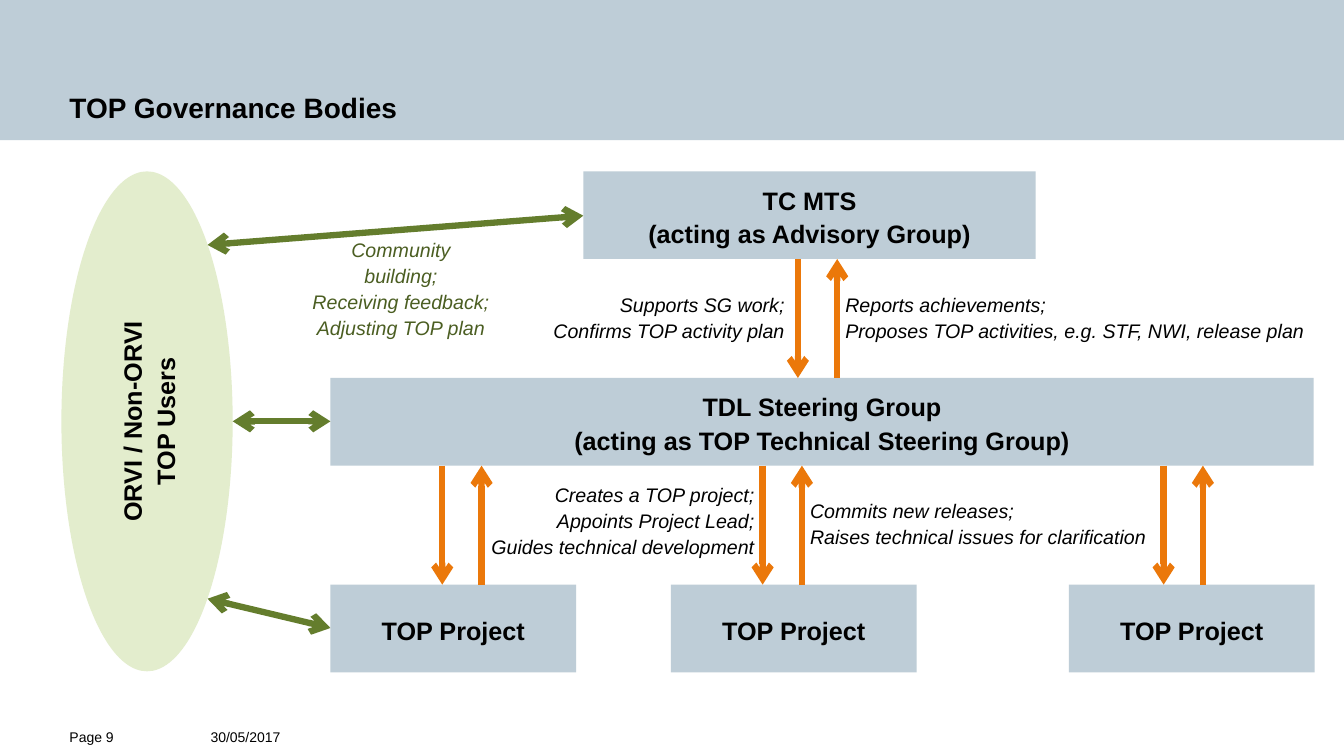
from lxml import etree
from pptx import Presentation
from pptx.dml.color import RGBColor
from pptx.enum import shapes, text
from pptx.oxml import ns
from pptx.util import Inches, Pt

FONT = "Arial"
BLACK = RGBColor(0x00, 0x00, 0x00)
BLUE_GREY = RGBColor(0xBE, 0xCD, 0xD7)
ORANGE = RGBColor(0xEB, 0x78, 0x0A)
GREEN = RGBColor(0x64, 0x7D, 0x2D)
DARK_GREEN = RGBColor(0x4B, 0x5E, 0x22)
PALE_GREEN = RGBColor(0xE3, 0xED, 0xCD)
LEFT, CENTER, RIGHT = text.PP_ALIGN.LEFT, text.PP_ALIGN.CENTER, text.PP_ALIGN.RIGHT
TOP, MIDDLE, BOTTOM = (text.MSO_ANCHOR.TOP, text.MSO_ANCHOR.MIDDLE,
                       text.MSO_ANCHOR.BOTTOM)

# Content: "\v" breaks a line inside a paragraph
TITLE = "TOP Governance Bodies"
FOOTERS = [("30/05/2017", 4.3, 2.09), ("Page 9", 1.93, 0.69)]  # text, width, indent
USERS = "ORVI / Non-ORVI\vTOP Users"
ADVISORY = "TC MTS\v(acting as Advisory Group)"
STEERING = "TDL Steering Group\v(acting as TOP Technical Steering Group)"
PROJECT = "TOP Project"
NOTES = [  # left, top, width, height, alignment, colour, paragraphs
    (5.48, 2.88, 2.31, 0.52, RIGHT, BLACK,
     ["Supports SG work;\vConfirms TOP activity plan"]),
    (8.39, 2.88, 4.58, 0.52, LEFT, BLACK,
     ["Reports achievements;", "Proposes TOP activities, e.g. STF, NWI, release plan"]),
    (4.87, 4.77, 2.62, 0.78, RIGHT, BLACK,
     ["Creates a TOP project;\vAppoints Project Lead;", "Guides technical development"]),
    (8.04, 4.93, 3.35, 0.52, LEFT, BLACK,
     ["Commits new releases;\vRaises technical issues for clarification"]),
    (3.1, 2.34, 1.76, 1.04, CENTER, DARK_GREEN,
     ["Community\vbuilding;", "Receiving feedback;", "Adjusting TOP plan"]),
]

# Layout
PAGE_WIDTH, PAGE_HEIGHT = 13.34, 7.5
BANNER_HEIGHT = 1.39
BOX_HEIGHT, BOX_GAP = 0.87, 1.18
ADVISORY_TOP, STEERING_TOP, PROJECT_TOP = (
    1.7 + level * (BOX_HEIGHT + BOX_GAP) for level in range(3))
PROJECT_LEFTS, PROJECT_WIDTH = [3.28, 6.66, 10.61], 2.44
PAIR_GAP = 0.39
ARROW_PAIRS = [(7.92, ADVISORY_TOP), (4.39, STEERING_TOP),
               (7.57, STEERING_TOP), (11.55, STEERING_TOP)]  # x, top of upper box
USER_LINKS = [((2.06, 2.43), (5.79, 2.14)), ((2.31, 4.18), (3.28, 4.18)),
              ((2.06, 5.94), (3.28, 6.23))]

deck = Presentation()
deck.slide_width, deck.slide_height = Inches(PAGE_WIDTH), Inches(PAGE_HEIGHT)
page = deck.slides.add_slide(deck.slide_layouts[6])


def write(shape, paragraphs, size, align=LEFT, anchor=TOP, margins=(0, 0, 0, 0),
          bold=False, italic=False, color=BLACK, spacing=1.1, wrap=True):
    frame = shape.text_frame
    frame.word_wrap = wrap
    frame.vertical_anchor = anchor
    (frame.margin_left, frame.margin_top,
     frame.margin_right, frame.margin_bottom) = map(Inches, margins)
    for index, words in enumerate(paragraphs):
        para = frame.add_paragraph() if index else frame.paragraphs[0]
        para.text = words
        para.alignment, para.line_spacing = align, spacing
        font = para.font
        font.name, font.size, font.bold, font.italic = FONT, Pt(size), bold, italic
        font.color.rgb = color


def add_text(left, top, width, height, paragraphs, size, **style):
    box = page.shapes.add_textbox(*map(Inches, (left, top, width, height)))
    write(box, paragraphs, size, **style)


def add_body(left, top, width, height, words="", kind=shapes.MSO_SHAPE.RECTANGLE,
             color=BLUE_GREY):
    body = page.shapes.add_shape(kind, *map(Inches, (left, top, width, height)))
    body.shadow.inherit = False
    body.fill.solid()
    body.fill.fore_color.rgb = color
    body.line.fill.background()
    if words:
        write(body, [words], 18, CENTER, MIDDLE, (0.12, 0.06, 0.12, 0.06), bold=True)
    return body


def add_arrow(start, end, color, both_ways=False):
    arrow = page.shapes.add_connector(shapes.MSO_CONNECTOR.STRAIGHT,
                                      *map(Inches, start + end))
    arrow.line.color.rgb, arrow.line.width = color, Pt(4.5)
    outline = arrow.line._get_or_add_ln()
    for tag in ["a:headEnd", "a:tailEnd"] if both_ways else ["a:tailEnd"]:
        etree.SubElement(outline, ns.qn(tag), type="arrow")
    etree.SubElement(arrow._element.spPr, ns.qn("a:effectLst"))


add_body(0, 0, PAGE_WIDTH, BANNER_HEIGHT)
for words, width, indent in FOOTERS:
    add_text(0, 7.21, width, 0.28, [words], 10, margins=(indent, 0, 0, 0.13))
add_text(0, 0, PAGE_WIDTH, BANNER_HEIGHT, [TITLE], 20, anchor=BOTTOM,
         margins=(0.69, 0.43, 2.32, 0.26), bold=True, spacing=1.0)
page.shapes[-1].top = Inches(-0.08)

add_body(5.79, ADVISORY_TOP, 4.49, BOX_HEIGHT, ADVISORY)
add_body(3.28, STEERING_TOP, 9.76, BOX_HEIGHT, STEERING)
for left in PROJECT_LEFTS:
    add_body(left, PROJECT_TOP, PROJECT_WIDTH, BOX_HEIGHT, PROJECT)

for x, box_top in ARROW_PAIRS:
    upper, lower = box_top + BOX_HEIGHT, box_top + BOX_HEIGHT + BOX_GAP
    add_arrow((x, upper), (x, lower), ORANGE)
    add_arrow((x + PAIR_GAP, lower), (x + PAIR_GAP, upper), ORANGE)

users = add_body(-1.02, 3.33, 4.96, 1.7, USERS, shapes.MSO_SHAPE.OVAL, PALE_GREEN)
users.rotation = 270
for start, end in USER_LINKS:
    add_arrow(start, end, GREEN, both_ways=True)

for left, top, width, height, align, color, paragraphs in NOTES:
    add_text(left, top, width, height, paragraphs, 14, align=align, color=color,
             italic=True, wrap=False)

deck.save("out.pptx")
